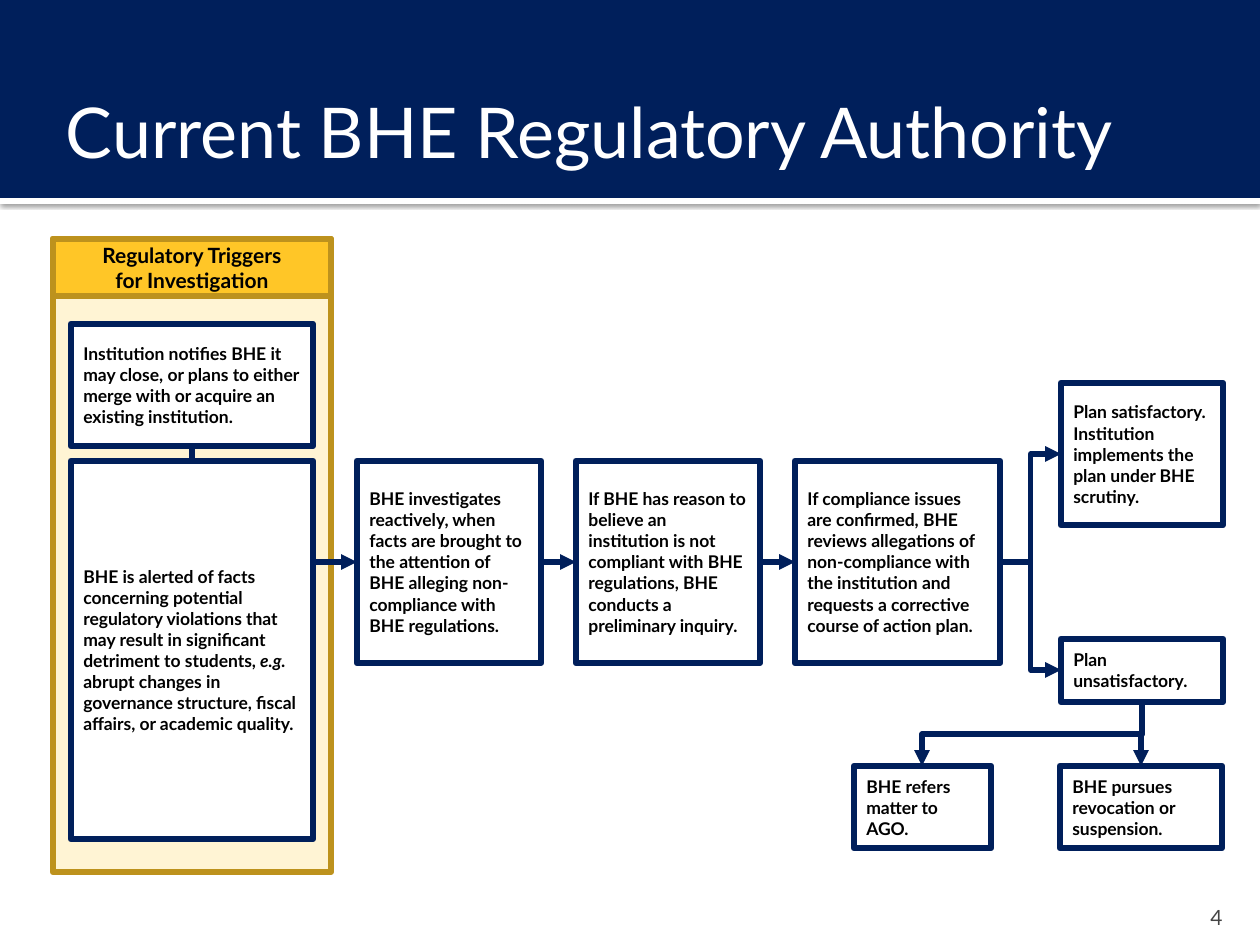
from lxml import etree
from pptx import Presentation
from pptx.dml.color import RGBColor
from pptx.enum.shapes import MSO_CONNECTOR, MSO_SHAPE
from pptx.enum.text import MSO_ANCHOR, MSO_AUTO_SIZE, PP_ALIGN
from pptx.oxml import parse_xml
from pptx.oxml.ns import nsdecls, qn
from pptx.util import Pt

EMU_PER_PX = 914400 / 126
NAVY = RGBColor(0x00, 0x1F, 0x5B)
GOLD = RGBColor(0xFF, 0xC6, 0x27)
DARK_GOLD = RGBColor(0xBD, 0x92, 0x1D)
CREAM = RGBColor(0xFF, 0xF4, 0xD4)
WHITE = RGBColor(0xFF, 0xFF, 0xFF)
BLACK = RGBColor(0x00, 0x00, 0x00)
GREY = RGBColor(0x45, 0x45, 0x45)
RECTANGLE = MSO_SHAPE.RECTANGLE
STRAIGHT, ELBOW = MSO_CONNECTOR.STRAIGHT, MSO_CONNECTOR.ELBOW
LEFT, CENTER, RIGHT = PP_ALIGN.LEFT, PP_ALIGN.CENTER, PP_ALIGN.RIGHT
MIDDLE, BOTTOM = MSO_ANCHOR.MIDDLE, MSO_ANCHOR.BOTTOM
NO_AUTOFIT = MSO_AUTO_SIZE.NONE
TOP_SIDE, LEFT_SIDE, BOTTOM_SIDE, RIGHT_SIDE = range(4)
TITLE_ONLY = 5
BAND_SHADOW = (
    f'<a:effectLst {nsdecls("a")}><a:outerShdw blurRad="31750" dist="10160" '
    'dir="5400000" algn="t" rotWithShape="0"><a:srgbClr val="000000">'
    '<a:alpha val="60000"/></a:srgbClr></a:outerShdw></a:effectLst>'
)


def px(value):
    return round(value * EMU_PER_PX)


class SlideBuilder:
    font_name = "Lato"
    border_width = Pt(3.78)
    connector_width = Pt(3)

    def __init__(self, slide):
        self.slide = slide
        self.shapes = slide.shapes

    def add_text(self, shape, paragraphs, size, color, align=LEFT,
                 anchor=MIDDLE, bold=False, margins=None):
        frame = shape.text_frame
        settings = {"word_wrap": True, "auto_size": NO_AUTOFIT,
                    "vertical_anchor": anchor, **(margins or {})}
        for name, value in settings.items():
            setattr(frame, name, value)
        for index, pieces in enumerate(paragraphs):
            para = frame.add_paragraph() if index else frame.paragraphs[0]
            para.alignment = align
            for text, italic in pieces:
                span = para.add_run()
                span.text = text
                styles = {"name": self.font_name, "size": Pt(size),
                          "bold": bold, "italic": italic}
                for name, value in styles.items():
                    setattr(span.font, name, value)
                span.font.color.rgb = color

    def rectangle(self, bounds, fill, border=None):
        box = self.shapes.add_shape(RECTANGLE, *map(px, bounds))
        box.shadow.inherit = False
        box.fill.solid()
        box.fill.fore_color.rgb = fill
        if border is None:
            box.line.fill.background()
        else:
            box.line.color.rgb = border
            box.line.width = self.border_width
        return box

    def band(self, bounds, fill, shadow=False):
        box = self.rectangle(bounds, fill)
        if shadow:
            properties = box._element.spPr
            properties.remove(properties.find(qn("a:effectLst")))
            properties.append(parse_xml(BAND_SHADOW))

    def step(self, bounds, *pieces):
        box = self.rectangle(bounds, WHITE, NAVY)
        runs = [(piece, index % 2 == 1) for index, piece in enumerate(pieces)]
        self.add_text(box, [runs], 10, BLACK, bold=True)
        return box

    def heading(self, bounds, lines):
        box = self.rectangle(bounds, GOLD, DARK_GOLD)
        self.add_text(box, [[(line, False)] for line in lines], 12, BLACK,
                      align=CENTER, bold=True)

    def title(self, bounds, text):
        box = self.shapes.title
        box.left, box.top, box.width, box.height = map(px, bounds)
        self.add_text(box, [[(text, False)]], 40, WHITE,
                      margins={"margin_left": px(13), "margin_right": px(6)})
        self.shapes._spTree.append(box._element)

    def page_number(self, bounds, text):
        box = self.shapes.add_textbox(*map(px, bounds))
        self.add_text(box, [[(text, False)]], 12, GREY, align=RIGHT,
                      anchor=BOTTOM, margins={"margin_bottom": 0})

    def connector(self, kind, start, end, arrow=True):
        line = self.shapes.add_connector(kind, *map(px, start + end))
        line.line.color.rgb = NAVY
        line.line.width = self.connector_width
        properties = line._element.spPr
        if arrow:
            etree.SubElement(properties.find(qn("a:ln")), qn("a:tailEnd"),
                             type="triangle")
        etree.SubElement(properties, qn("a:effectLst"))
        return line

    def link(self, source, source_side, target, target_side, arrow=True):
        line = self.connector(STRAIGHT, (0, 0), (0, 0), arrow)
        line.begin_connect(source, source_side)
        line.end_connect(target, target_side)

    def falling_elbow(self, start, end):
        center_x, center_y = (start[0] + end[0]) / 2, (start[1] + end[1]) / 2
        half_width, half_height = (end[1] - start[1]) / 2, (start[0] - end[0]) / 2
        line = self.connector(ELBOW,
                              (center_x - half_width, center_y - half_height),
                              (center_x + half_width, center_y + half_height))
        line._element.spPr.find(qn("a:xfrm")).set("rot", "5400000")


def main():
    deck = Presentation()
    deck.slide_width, deck.slide_height = px(1260), px(945)
    slide = deck.slides.add_slide(deck.slide_layouts[TITLE_ONLY])
    page = SlideBuilder(slide)

    page.band((0, 198, 1260, 6), WHITE, shadow=True)
    page.band((0, 0, 1260, 198), NAVY)
    page.page_number((1134, 892, 101, 38), "4")
    page.title((53, 73, 1155, 116), "Current BHE Regulatory Authority")

    page.rectangle((53, 239, 278, 633), CREAM, DARK_GOLD)
    notice = page.step(
        (71, 324, 242, 122),
        "Institution notifies BHE it may close, or plans to either merge with "
        "or acquire an existing institution.")
    alert = page.step(
        (71, 461, 242, 378),
        "BHE is alerted of facts concerning potential regulatory violations "
        "that may result in significant detriment to students, ",
        "e.g. ",
        "abrupt changes in governance structure, fiscal affairs, or academic "
        "quality.")
    page.link(notice, BOTTOM_SIDE, alert, TOP_SIDE, arrow=False)
    page.heading((53, 239, 278, 57),
                 ("Regulatory Triggers", "for Investigation"))

    stages = [
        page.step((left, 461, width, 202), text)
        for left, width, text in (
            (357, 184, "BHE investigates reactively, when facts are brought to "
                       "the attention of BHE alleging non-compliance with BHE "
                       "regulations."),
            (576, 184, "If BHE has reason to believe an institution is not "
                       "compliant with BHE regulations, BHE conducts a "
                       "preliminary inquiry."),
            (795, 205, "If compliance issues are confirmed, BHE reviews "
                       "allegations of non-compliance with the institution and "
                       "requests a corrective course of action plan."),
        )
    ]
    entry = page.connector(STRAIGHT, (313, 562), (357, 562))
    entry.end_connect(stages[0], LEFT_SIDE)
    for source, target in zip(stages, stages[1:]):
        page.link(source, RIGHT_SIDE, target, LEFT_SIDE)

    page.step((1061, 383, 162, 142),
              "Plan satisfactory. Institution implements the plan under BHE "
              "scrutiny.")
    page.step((1061, 639, 162, 63), "Plan unsatisfactory.")
    page.step((854, 766, 137, 82), "BHE refers matter to AGO.")
    page.step((1060, 766, 162, 82), "BHE pursues revocation or suspension.")
    for outcome_y in (454, 670):
        page.connector(ELBOW, (1000, 562), (1061, outcome_y))
    for action_x in (1141, 922):
        page.falling_elbow((1142, 702), (action_x, 766))

    deck.save("out.pptx")


if __name__ == "__main__":
    main()
